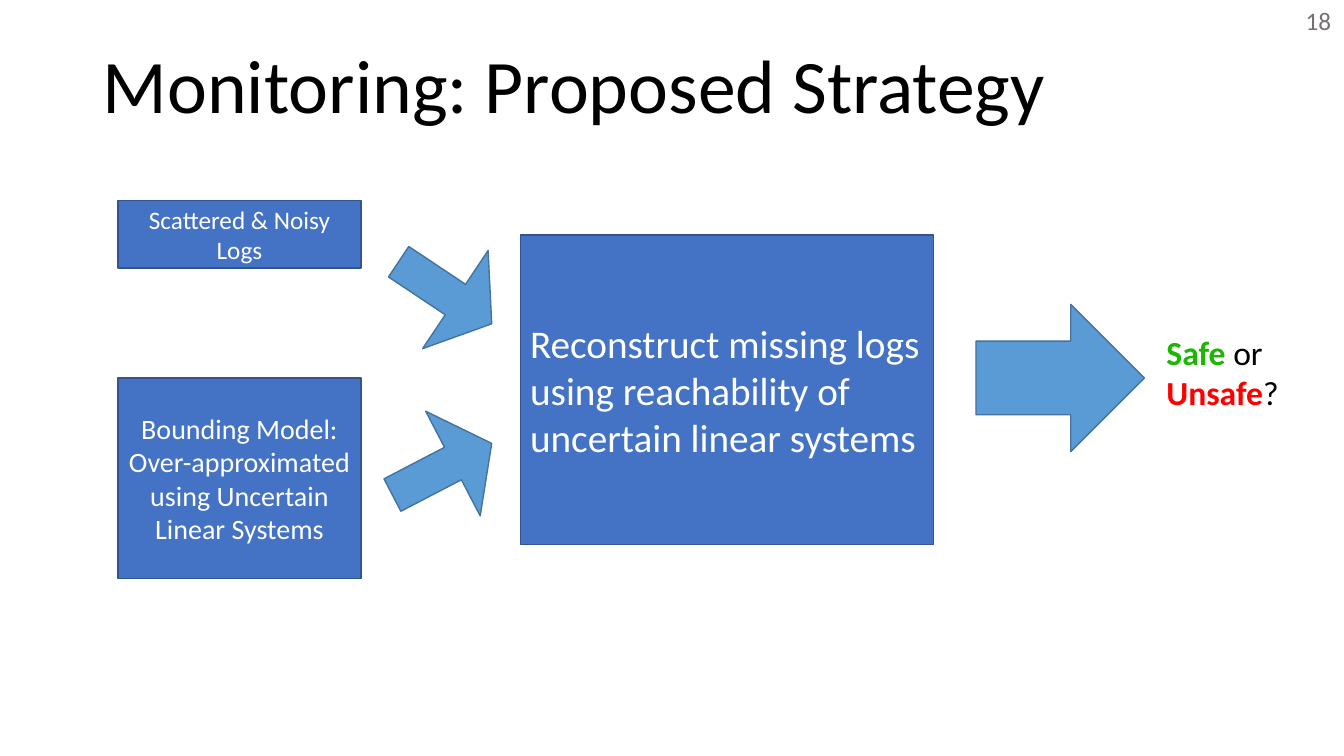
from dataclasses import dataclass

from pptx import Presentation
from pptx.dml.color import RGBColor
from pptx.enum.shapes import MSO_SHAPE
from pptx.enum.text import MSO_ANCHOR, MSO_AUTO_SIZE, PP_ALIGN
from pptx.util import Emu, Pt

RECT = MSO_SHAPE.RECTANGLE
ARROW = MSO_SHAPE.RIGHT_ARROW
LEFT, CENTER = PP_ALIGN.LEFT, PP_ALIGN.CENTER
TOP, MIDDLE, BOTTOM = MSO_ANCHOR.TOP, MSO_ANCHOR.MIDDLE, MSO_ANCHOR.BOTTOM
NO_FIT = MSO_AUTO_SIZE.NONE

SCALE = 9144
FONT = "Calibri"
COLORS = {
    "box": "4472C4",
    "box edge": "325491",
    "arrow": "5B9BD5",
    "arrow edge": "43739E",
    "white": "FFFFFF",
    "black": "000000",
    "safe": "1BB701",
    "unsafe": "FF0000",
    "gray": "767171",
}


@dataclass(frozen=True)
class Area:
    left: int
    top: int
    width: int
    height: int

    def emu(self) -> list[Emu]:
        return [px(n) for n in (self.left, self.top, self.width, self.height)]


@dataclass(frozen=True)
class Box:
    area: Area
    text: str
    size: int
    align: PP_ALIGN = CENTER


@dataclass(frozen=True)
class Arrow:
    area: Area
    turn: float = 0
    shaft: float = 0.5
    head: float = 0.5


@dataclass(frozen=True)
class Word:
    text: str
    color: str
    bold: bool = False


@dataclass(frozen=True)
class Label:
    area: Area
    size: int
    words: tuple[Word, ...]


TITLE = Area(92, 32, 1150, 102)
BOXES = (
    Box(Area(117, 199, 241, 67), "Scattered & Noisy Logs", 18),
    Box(
        Area(117, 375, 241, 199),
        "Bounding Model: Over-approximated using Uncertain Linear Systems",
        20,
    ),
    Box(
        Area(516, 233, 410, 307),
        "Reconstruct missing logs using reachability of uncertain linear systems",
        28,
        LEFT,
    ),
)
ARROWS = (
    Arrow(Area(968, 302, 167, 146)),
    Arrow(Area(386, 232, 111, 117), 33.7, 0.31, 0.39),
    Arrow(Area(383, 407, 111, 117), 332.5, 0.31, 0.39),
)
LABELS = (
    Label(
        Area(1147, 324, 159, 91),
        24,
        (
            Word("Safe", "safe", True),
            Word(" or ", "black"),
            Word("Unsafe", "unsafe", True),
            Word("?", "black"),
        ),
    ),
    Label(Area(1285, 0, 49, 40), 18, (Word("18", "gray"),)),
)


def px(count: int) -> Emu:
    return Emu(count * SCALE)


def tint(name: str) -> RGBColor:
    return RGBColor.from_string(COLORS[name])


def style(run, size: int, color: str, bold: bool = False) -> None:
    run.font.name = FONT
    run.font.size = Pt(size)
    run.font.bold = bold
    run.font.color.rgb = tint(color)


def setup(frame, anchor: MSO_ANCHOR) -> None:
    frame.word_wrap = True
    frame.auto_size = NO_FIT
    frame.vertical_anchor = anchor


def draw_shape(slide, kind: MSO_SHAPE, area: Area, color: str):
    shape = slide.shapes.add_shape(kind, *area.emu())
    shape.shadow.inherit = False
    shape.fill.solid()
    shape.fill.fore_color.rgb = tint(color)
    shape.line.color.rgb = tint(f"{color} edge")
    shape.line.width = Pt(1)
    return shape


def draw_title(slide, text: str) -> None:
    title = slide.shapes.title
    title.left, title.top, title.width, title.height = TITLE.emu()
    frame = title.text_frame
    frame.text = text
    setup(frame, BOTTOM)
    line = frame.paragraphs[0]
    line.alignment = LEFT
    line.line_spacing = 0.9
    style(line.runs[0], 54, "black")


def draw_box(slide, box: Box) -> None:
    frame = draw_shape(slide, RECT, box.area, "box").text_frame
    frame.text = box.text
    setup(frame, MIDDLE)
    line = frame.paragraphs[0]
    line.alignment = box.align
    style(line.runs[0], box.size, "white")


def draw_arrow(slide, arrow: Arrow) -> None:
    shape = draw_shape(slide, ARROW, arrow.area, "arrow")
    shape.rotation = arrow.turn
    shape.adjustments[0] = arrow.shaft
    shape.adjustments[1] = arrow.head


def draw_label(slide, label: Label) -> None:
    frame = slide.shapes.add_textbox(*label.area.emu()).text_frame
    setup(frame, TOP)
    for word in label.words:
        run = frame.paragraphs[0].add_run()
        run.text = word.text
        style(run, label.size, word.color, word.bold)


def main() -> None:
    deck = Presentation()
    deck.slide_width, deck.slide_height = px(1333), px(750)
    slide = deck.slides.add_slide(deck.slide_layouts.get_by_name("Title Only"))
    draw_title(slide, "Monitoring: Proposed Strategy")
    for box in BOXES:
        draw_box(slide, box)
    for arrow in ARROWS:
        draw_arrow(slide, arrow)
    for label in LABELS:
        draw_label(slide, label)
    deck.save("out.pptx")


if __name__ == "__main__":
    main()
